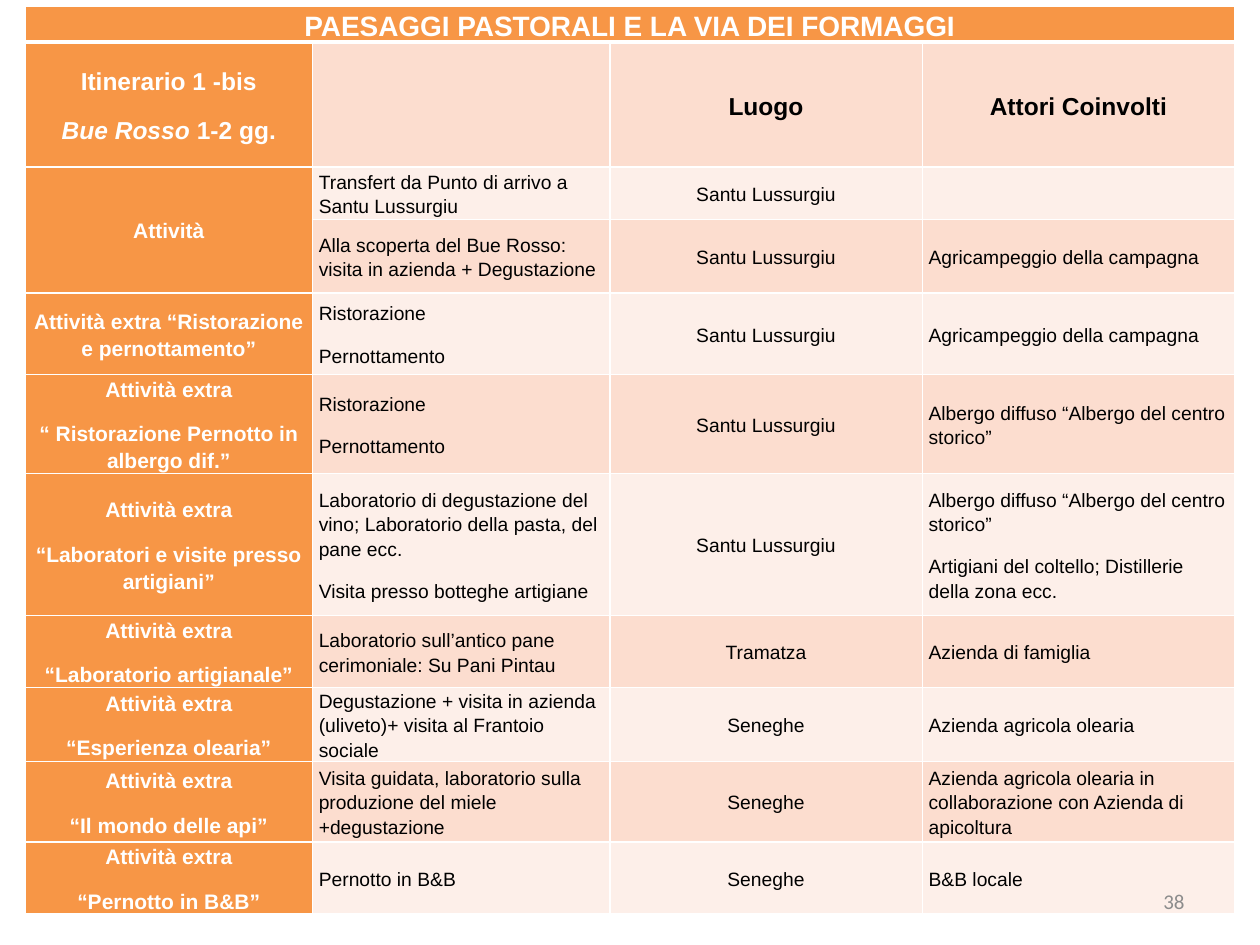
"""Build the itinerary slide: one table of activities, places and people."""
from lxml.etree import SubElement
from pptx import Presentation
from pptx.dml.color import RGBColor
from pptx.enum.text import MSO_ANCHOR as Anchor, PP_ALIGN as Align
from pptx.oxml.ns import qn
from pptx.util import Inches, Pt

ORANGE = RGBColor(0xF7, 0x96, 0x46)
PEACH = RGBColor(0xFC, 0xDD, 0xCF)
PALE = RGBColor(0xFD, 0xEF, 0xE9)
WHITE = RGBColor(0xFF, 0xFF, 0xFF)
BLACK = RGBColor(0x00, 0x00, 0x00)
GRAY = RGBColor(0x8C, 0x8C, 0x8C)

COLUMN_WIDTHS = (2.28, 2.36, 2.48, 2.48)
ROW_HEIGHTS = (0.25, 0.99, 0.42, 0.58, 0.65, 0.68, 1.13, 0.57, 0.58, 0.64, 0.38)
COLUMN_ALIGNS = (Align.CENTER, Align.LEFT, Align.CENTER, Align.LEFT)

TITLE = "PAESAGGI PASTORALI E LA VIA DEI FORMAGGI"
HEADINGS = ("Itinerario 1 -bis\nBue Rosso 1-2 gg.", "", "Luogo", "Attori Coinvolti")
ACTIVITIES = (
    ("Attività", "Transfert da Punto di arrivo a Santu Lussurgiu", "Santu Lussurgiu", ""),
    ("", "Alla scoperta del Bue Rosso: visita in azienda + Degustazione",
     "Santu Lussurgiu", "Agricampeggio della campagna"),
    ("Attività extra “Ristorazione e pernottamento”", "Ristorazione\nPernottamento",
     "Santu Lussurgiu", "Agricampeggio della campagna"),
    ("Attività extra\n“ Ristorazione Pernotto in albergo dif.”",
     "Ristorazione\nPernottamento", "Santu Lussurgiu",
     "Albergo diffuso “Albergo del centro storico”"),
    ("Attività extra\n“Laboratori e visite presso artigiani”",
     "Laboratorio di degustazione del vino; Laboratorio della pasta, del pane ecc.\n"
     "Visita presso botteghe artigiane", "Santu Lussurgiu",
     "Albergo diffuso “Albergo del centro storico”\n"
     "Artigiani del coltello; Distillerie della zona ecc."),
    ("Attività extra\n“Laboratorio artigianale”",
     "Laboratorio sull’antico pane cerimoniale: Su Pani Pintau",
     "Tramatza", "Azienda di famiglia"),
    ("Attività extra\n“Esperienza olearia”",
     "Degustazione + visita in azienda (uliveto)+ visita al Frantoio sociale",
     "Seneghe", "Azienda agricola olearia"),
    ("Attività extra\n“Il mondo delle api”",
     "Visita guidata, laboratorio sulla produzione del miele +degustazione",
     "Seneghe", "Azienda agricola olearia in collaborazione con Azienda di apicoltura"),
    ("Attività extra\n“Pernotto in B&B”", "Pernotto in B&B", "Seneghe", "B&B locale"),
)


def write_text(frame, text, *, size, color, font="Arial", bold=False,
               align=Align.LEFT, italic="", line_spacing=None, space_after=0):
    """Fill a text frame, one paragraph per line, with one phrase in italics."""
    for index, line in enumerate(text.split("\n")):
        para = frame.paragraphs[0] if index == 0 else frame.add_paragraph()
        para.alignment = align
        para.line_spacing = line_spacing
        para.space_after = Pt(space_after)
        slanted = italic if italic and line.startswith(italic) else ""
        for part in filter(None, (slanted, line[len(slanted):])):
            span = para.add_run()
            span.text = part
            span.font.name = font
            span.font.size = Pt(size)
            span.font.bold = bold
            span.font.italic = part == slanted
            span.font.color.rgb = color


def add_borders(cell, **widths):
    """Draw white borders, 1 point wide unless a side is given its own width."""
    properties = cell._tc.get_or_add_tcPr()
    for side in "LRTB":
        line = SubElement(properties, qn(f"a:ln{side}"), w=str(Pt(widths.get(side, 1))))
        fill = SubElement(line, qn("a:solidFill"))
        SubElement(fill, qn("a:srgbClr"), val=str(WHITE))


def format_cell(cell, fill, **border_widths):
    """Set the margins, borders and fill of a cell."""
    cell.margin_left = cell.margin_right = Inches(0.05)
    cell.margin_top = cell.margin_bottom = 0
    cell.vertical_anchor = Anchor.MIDDLE
    add_borders(cell, **border_widths)
    cell.fill.solid()
    cell.fill.fore_color.rgb = fill


def write_cell(cell, text, **text_format):
    """Write text with the spacing shared by all table cells."""
    if text:
        write_text(cell.text_frame, text, line_spacing=1.15, space_after=10, **text_format)


def add_itinerary(page):
    """Add the table with its title, headings and activities."""
    table = page.shapes.add_table(
        len(ROW_HEIGHTS), len(COLUMN_WIDTHS), Inches(0.2), Inches(0.05),
        Inches(sum(COLUMN_WIDTHS)), Inches(sum(ROW_HEIGHTS))).table
    for column, width in zip(table.columns, COLUMN_WIDTHS):
        column.width = Inches(width)
    for row, height in zip(table.rows, ROW_HEIGHTS):
        row.height = Inches(height)

    for index, row in enumerate(table.rows):
        band = PEACH if index % 2 else PALE
        borders = {0: {"B": 3}, 1: {"T": 3}}.get(index, {})
        for number, cell in enumerate(row.cells):
            format_cell(cell, ORANGE if index == 0 or number == 0 else band, **borders)
    table.cell(0, 0).merge(table.cell(0, 3))
    table.cell(2, 0).merge(table.cell(3, 0))

    write_cell(table.cell(0, 0), TITLE, size=16, color=WHITE, bold=True, align=Align.CENTER)
    for number, heading in enumerate(HEADINGS):
        write_cell(table.cell(1, number), heading, size=14, bold=True, italic="Bue Rosso ",
                   color=BLACK if number else WHITE, align=Align.CENTER)
    for index, activity in enumerate(ACTIVITIES, start=2):
        for number, (text, align) in enumerate(zip(activity, COLUMN_ALIGNS)):
            write_cell(table.cell(index, number), text, size=11 if number else 12,
                       color=BLACK if number else WHITE, bold=number == 0, align=align)


def add_page_number(page):
    """Add the page number at the lower right."""
    box = page.shapes.add_textbox(Inches(7.17), Inches(6.95), Inches(2.33), Inches(0.4))
    box.text_frame.word_wrap = True
    box.text_frame.vertical_anchor = Anchor.MIDDLE
    write_text(box.text_frame, "38", size=12, color=GRAY, font="Calibri", align=Align.RIGHT)


def main():
    """Create the deck and save it."""
    deck = Presentation()
    deck.slide_width, deck.slide_height = Inches(10), Inches(7.5)
    page = deck.slides.add_slide(deck.slide_layouts[6])
    add_itinerary(page)
    add_page_number(page)
    deck.save("out.pptx")


if __name__ == "__main__":
    main()
